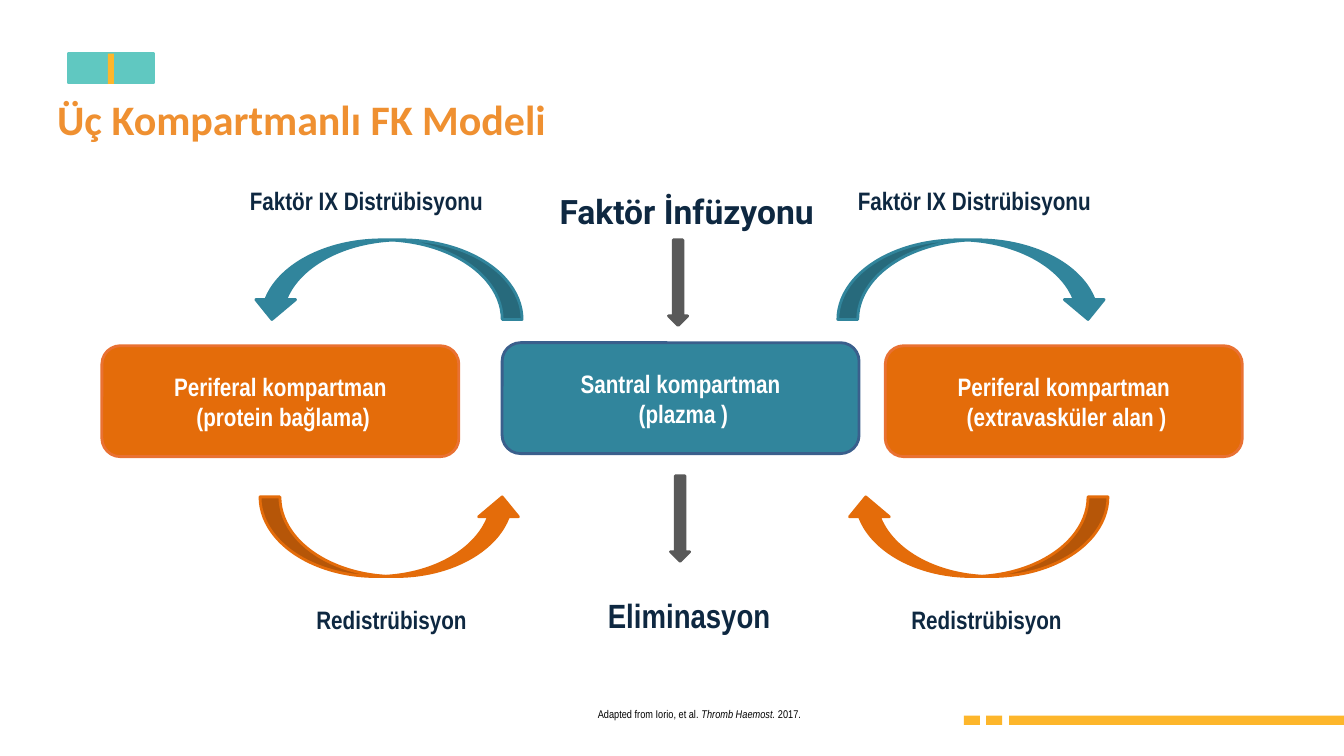
from pptx import Presentation
from pptx import util as u
from pptx.dml.color import RGBColor
from pptx.enum import shapes, text

ORANGE = RGBColor(0xE4, 0x6C, 0x0A)
ORANGE_EDGE = RGBColor(0xE9, 0x71, 0x32)
TEAL = RGBColor(0x31, 0x85, 0x9C)
TEAL_EDGE = RGBColor(0x3A, 0x5F, 0x8C)
MINT = RGBColor(0x60, 0xC8, 0xC1)
YELLOW = RGBColor(0xFD, 0xB6, 0x2B)
TITLE_ORANGE = RGBColor(0xEF, 0x90, 0x31)
NAVY = RGBColor(0x0E, 0x28, 0x41)
GREY = RGBColor(0x59, 0x59, 0x59)
WHITE = RGBColor(0xFF, 0xFF, 0xFF)
BLACK = RGBColor(0, 0, 0)

KIND = shapes.MSO_SHAPE
CENTER = text.PP_ALIGN.CENTER
LEFT = text.PP_ALIGN.LEFT


class ModelSlide:
    """Holds the style and the slide; places are percentages of its size."""

    font = "Arial Narrow"

    def __init__(self, deck):
        self.deck = deck
        self.slide = deck.slides.add_slide(deck.slide_layouts[5])

    def place(self, left, top, width, height):
        across, down = self.deck.slide_width / 100, self.deck.slide_height / 100
        return [u.Emu(round(share * unit)) for share, unit in
                zip((left, top, width, height), (across, down, across, down))]

    def add_lines(self, frame, lines, size, color, bold=True, font=None, align=LEFT):
        """Fill a frame; each line is a list of (words, italic) runs."""
        for index, line in enumerate(lines):
            paragraph = frame.add_paragraph() if index else frame.paragraphs[0]
            paragraph.alignment = align
            for words, italic in line:
                run = paragraph.add_run()
                run.text = words
                run.font.name = font or self.font
                run.font.size = u.Pt(size)
                run.font.bold = bold
                run.font.italic = italic
                run.font.color.rgb = color

    def title(self, words, place):
        heading = self.slide.shapes.title
        heading.left, heading.top, heading.width, heading.height = self.place(*place)
        frame = heading.text_frame
        frame.auto_size = text.MSO_AUTO_SIZE.NONE
        frame.vertical_anchor = text.MSO_ANCHOR.TOP
        self.add_lines(frame, [[(words, False)]], 30, TITLE_ORANGE,
                       font="Calibri", align=CENTER)

    def shape(self, kind, place, fill, edge=None, weight=2, flip=False):
        shape = self.slide.shapes.add_shape(kind, *self.place(*place))
        shape.shadow.inherit = False
        shape.fill.solid()
        shape.fill.fore_color.rgb = fill
        if edge is None:
            shape.line.fill.background()
        else:
            shape.line.color.rgb = edge
            shape.line.width = u.Pt(weight)
        if flip:
            shape.element.spPr.get_or_add_xfrm().set("flipH", "1")
        return shape

    def compartment(self, left, top, lines, fill, edge):
        box = self.shape(KIND.ROUNDED_RECTANGLE, (left, top, 26.56, 14.67), fill, edge)
        box.text_frame.vertical_anchor = text.MSO_ANCHOR.MIDDLE
        self.add_lines(box.text_frame, [[(line, False)] for line in lines],
                       18, WHITE, align=CENTER)

    def label(self, runs, place, size=18, color=NAVY, bold=True, font=None, wrap=False):
        frame = self.slide.shapes.add_textbox(*self.place(*place)).text_frame
        frame.word_wrap = wrap
        self.add_lines(frame, [runs], size, color, bold, font)


def main():
    deck = Presentation()
    deck.slide_width, deck.slide_height = u.Inches(13.33), u.Inches(7.5)
    page = ModelSlide(deck)

    for left, width in ((75.09, 24.91), (73.37, 1.2), (71.72, 1.2)):
        page.shape(KIND.RECTANGLE, (left, 94.67, width, 1.2), YELLOW)
    page.shape(KIND.RECTANGLE, (5.03, 7.07, 6.45, 3.87), MINT, MINT, 1.5)
    page.shape(KIND.RECTANGLE, (8.03, 7.1, 0.45, 4), YELLOW)
    page.title("Üç Kompartmanlı FK Modeli ", (3.45, 11.73, 38.71, 8.13))

    peripheral, central = (ORANGE, ORANGE_EDGE), (TEAL, TEAL_EDGE)
    for left, top, name, detail, colors in (
            (7.58, 45.73, "Periferal kompartman", " (protein bağlama)", peripheral),
            (37.36, 45.33, "Santral kompartman", " (plazma )", central),
            (65.87, 45.73, "Periferal kompartman", " (extravasküler alan )", peripheral)):
        page.compartment(left, top, (name, detail), *colors)

    for left, outward_left in ((18.75, True), (62.34, False)):
        page.shape(KIND.CURVED_DOWN_ARROW, (left, 31.73, 20.1, 10.53),
                   TEAL, TEAL, flip=outward_left)
        page.shape(KIND.CURVED_UP_ARROW, (left + 0.6, 65.73, 19.5, 10.53),
                   ORANGE, ORANGE, flip=not outward_left)
    for left, top in ((49.74, 31.73), (49.89, 62.93)):
        page.shape(KIND.DOWN_ARROW, (left, top, 1.43, 11.33), GREY, GREY)

    for left in (17.85, 63.09):
        page.label([("Faktör IX Distrübisyonu", False)], (left, 23.87, 19.5, 5.33))
    for left in (22.8, 67.07):
        page.label([("Redistrübisyon", False)], (left, 79.33, 12.83, 5.33))
    page.label([("Faktör İnfüzyonu", False)], (40.89, 24.53, 20.63, 6.67),
               size=24, font="Roboto")
    page.label([("Eliminasyon", False)], (44.49, 78, 13.73, 6.67), size=24)
    page.label([("Adapted from Iorio, et al. ", False), ("Thromb Haemost.", True),
                (" 2017.", False)], (43.74, 92.93, 37.21, 6.67),
               size=8, color=BLACK, bold=False, wrap=True)

    deck.save("out.pptx")


if __name__ == "__main__":
    main()
